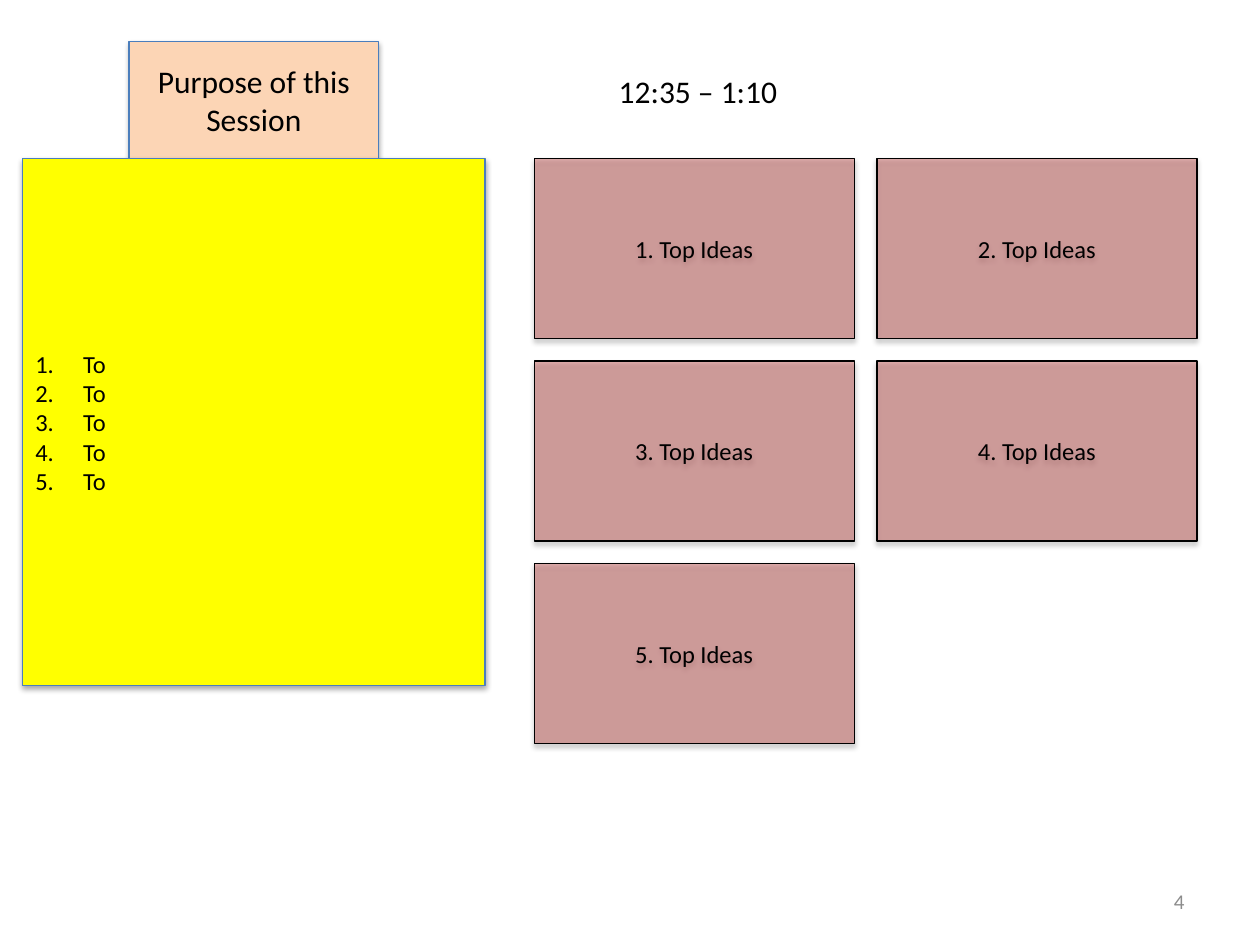
from pptx import Presentation
from pptx.dml.color import RGBColor
from pptx.enum.shapes import MSO_SHAPE
from pptx.enum.text import MSO_ANCHOR as ANCHOR, MSO_AUTO_SIZE as FIT, PP_ALIGN as ALIGN
from pptx.oxml.ns import qn
from pptx.util import Inches, Pt
from lxml.etree import SubElement

BLACK = RGBColor(0x00, 0x00, 0x00)
GREY = RGBColor(0x8C, 0x8C, 0x8C)
PEACH = RGBColor(0xFC, 0xD5, 0xB5)
YELLOW = RGBColor(0xFF, 0xFF, 0x00)
RED = RGBColor(0xC0, 0x50, 0x4D)
BLUE = RGBColor(0x4B, 0x7E, 0xBC)
FONT = "Calibri"


def write(s, *lines, size=14, color=BLACK, align=ALIGN.CENTER, anchor=ANCHOR.MIDDLE):
    tf = s.text_frame
    tf.word_wrap = True
    tf.auto_size = FIT.NONE
    tf.vertical_anchor = anchor
    for i, text in enumerate(lines):
        p = tf.add_paragraph() if i else tf.paragraphs[0]
        p.alignment = align
        p.space_before = Pt(0)
        r = p.add_run()
        r.text = text
        r.font.name = FONT
        r.font.size = Pt(size)
        r.font.color.rgb = color
    return tf


def place(s, left, top, width, height):
    s.left, s.top = Inches(left), Inches(top)
    s.width, s.height = Inches(width), Inches(height)


def style_box(s, fill, line, alpha=None):
    s.fill.solid()
    s.fill.fore_color.rgb = fill
    s.line.color.rgb = line
    s.line.width = Pt(0.75)
    sp_pr = s._element.spPr
    if alpha:
        color = sp_pr.find(qn("a:solidFill")).find(qn("a:srgbClr"))
        SubElement(color, qn("a:alpha"), val=str(alpha * 1000))
    s.shadow.inherit = False
    shadow = SubElement(sp_pr.find(qn("a:effectLst")), qn("a:outerShdw"),
                        blurRad=str(Pt(3.1)), dist=str(Pt(1.8)),
                        dir="5400000", rotWithShape="0")
    color = SubElement(shadow, qn("a:srgbClr"), val=str(BLACK))
    SubElement(color, qn("a:alpha"), val="35000")


def add_purpose(slide, left, top, width, height):
    title, body = slide.shapes.title, slide.placeholders[1]
    title_width, title_height = 1.98, 0.93
    place(title, left + (width - title_width) / 2, top - title_height,
          title_width, title_height)
    style_box(title, PEACH, BLUE)
    write(title, "Purpose of this Session", size=18)

    place(body, left, top, width, height)
    style_box(body, YELLOW, BLUE)
    tf = write(body, *["To"] * 5, align=ALIGN.LEFT)
    for p in tf.paragraphs:
        p_pr = p._p.get_or_add_pPr()
        p_pr.set("marL", str(Inches(0.38)))
        p_pr.set("indent", str(-Inches(0.38)))
        SubElement(p_pr, qn("a:buFont"), typeface="+mj-lt")
        SubElement(p_pr, qn("a:buAutoNum"), type="arabicPeriod")


def add_ideas(slide, left, top, width, height, count=5, columns=2, rows=3, gap=0.18):
    w = (width - gap * (columns - 1)) / columns
    h = (height - gap * (rows - 1)) / rows
    for i in range(count):
        row, column = divmod(i, columns)
        s = slide.shapes.add_shape(MSO_SHAPE.RECTANGLE, 0, 0, 0, 0)
        place(s, left + column * (w + gap), top + row * (h + gap), w, h)
        style_box(s, RED, BLACK, alpha=45)
        write(s, f"{i + 1}. Top Ideas")


def add_label(slide, text, left, top, width, height, **fmt):
    s = slide.shapes.add_textbox(Inches(left), Inches(top), Inches(width), Inches(height))
    write(s, text, **fmt)


def main():
    prs = Presentation()
    prs.slide_width, prs.slide_height = Inches(10), Inches(7.5)
    slide = prs.slides.add_slide(prs.slide_layouts[1])
    add_purpose(slide, 0.18, 1.26, 3.67, 4.18)
    add_ideas(slide, 4.24, 1.26, 5.26, 4.64)
    add_label(slide, "12:35 – 1:10", 4.27, 0.52, 2.54, 0.4, size=18, anchor=ANCHOR.TOP)
    add_label(slide, "4", 7.17, 6.95, 2.33, 0.4, size=12, color=GREY, align=ALIGN.RIGHT)
    prs.save("out.pptx")


if __name__ == "__main__":
    main()
